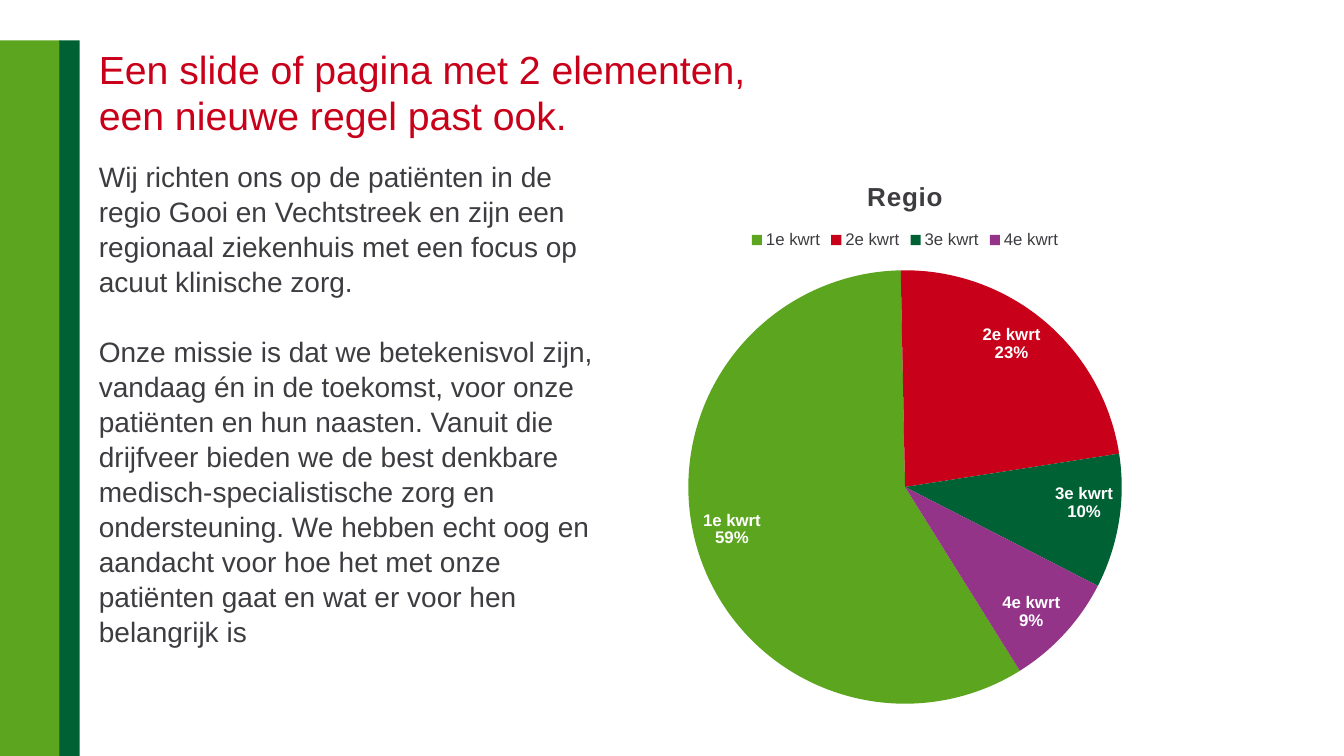
from lxml.etree import SubElement
from pptx import Presentation
from pptx.chart.data import CategoryChartData
from pptx.dml.color import RGBColor
from pptx.enum.chart import XL_CHART_TYPE as Chart, XL_LABEL_POSITION as LabelPos
from pptx.enum.chart import XL_LEGEND_POSITION as LegendPos
from pptx.enum.shapes import MSO_SHAPE as Shape
from pptx.enum.text import MSO_ANCHOR as Anchor
from pptx.oxml.ns import qn
from pptx.util import Pt

# Content
TITLE = ["Een slide of pagina met 2 elementen,\veen nieuwe regel past ook."]
BODY = [
    "Wij richten ons op de patiënten in de regio Gooi en Vechtstreek en zijn een "
    "regionaal ziekenhuis met een focus op acuut klinische zorg.",
    "Onze missie is dat we betekenisvol zijn, vandaag én in de toekomst, voor onze "
    "patiënten en hun naasten. Vanuit die drijfveer bieden we de best denkbare "
    "medisch-specialistische zorg en ondersteuning. We hebben echt oog en aandacht "
    "voor hoe het met onze patiënten gaat en wat er voor hen belangrijk is",
]
GREEN, RED, DARK_GREEN, PURPLE = "5CA51E", "C90019", "006134", "933489"
INK, WHITE = "3E3C40", "FFFFFF"
CHART_TITLE = "Regio"
QUARTERS = [("1e kwrt", 8.2, GREEN), ("2e kwrt", 3.2, RED),
            ("3e kwrt", 1.4, DARK_GREEN), ("4e kwrt", 1.2, PURPLE)]

# Layout in points
BARS = [(0, 43.2, GREEN), (42.5, 14.4, DARK_GREEN)]
BAR_TOP, SLIDE_W, SLIDE_H = 28.8, 960, 540
LEFT, CHART_LEFT, TOP, COL_W, COL_H = 70.6, 462.2, 113, 368.6, 398.2
PIE_AREA = {"x": 0.08, "y": 0.2, "w": 0.84, "h": 0.78}


def rgb(color):
    return RGBColor.from_string(color)


def style(font, size, color, bold=False):
    font.name, font.size, font.bold = "Arial", Pt(size), bold
    font.color.rgb = rgb(color)


def paint(fill, color):
    fill.solid()
    fill.fore_color.rgb = rgb(color)


def add_text(s, box, paragraphs, size, color, leading, anchor=Anchor.TOP):
    tf = s.shapes.add_textbox(*map(Pt, box)).text_frame
    tf.word_wrap, tf.vertical_anchor = True, anchor
    tf.margin_left = tf.margin_top = tf.margin_right = tf.margin_bottom = 0
    for i, text in enumerate(paragraphs):
        p = tf.add_paragraph() if i else tf.paragraphs[0]
        p.text = text
        p.line_spacing = Pt(leading)
        if i:
            p.space_before = Pt(leading)
        for r in p.runs:
            style(r.font, size, color)


def add_pie(s):
    data = CategoryChartData()
    data.categories = [name for name, _, _ in QUARTERS]
    data.add_series(CHART_TITLE, [value for _, value, _ in QUARTERS])
    box = map(Pt, (CHART_LEFT, TOP, COL_W, COL_H))
    chart = s.shapes.add_chart(Chart.PIE, *box, data).chart
    style(chart.font, 10, INK)

    # Title and legend
    chart.has_title = True
    p = chart.chart_title.text_frame.paragraphs[0]
    p.text = CHART_TITLE
    style(p.runs[0].font, 18.6, INK, True)
    p.runs[0]._r.get_or_add_rPr().set("spc", "50")
    chart.has_legend = True
    chart.legend.position = LegendPos.TOP
    chart.legend.include_in_layout = False
    style(chart.legend.font, 12, INK)

    # Slices and labels
    plot = chart.plots[0]
    plot.vary_by_categories = True
    for i, (_, _, color) in enumerate(QUARTERS):
        paint(plot.series[0].points[i].format.fill, color)
    labels = plot.series[0].data_labels
    style(labels.font, 12, WHITE, True)
    labels.show_category_name = labels.show_percentage = True
    labels.show_value = False
    labels.number_format, labels.number_format_is_linked = "0%", False
    labels.position = LabelPos.INSIDE_END
    labels._element.find(qn("c:showBubbleSize")).addnext(
        labels._element.makeelement(qn("c:separator"), {}))
    labels._element.find(qn("c:separator")).text = "\n"

    # Rotation and plot area
    pie = chart._chartSpace.find(".//" + qn("c:pieChart"))
    angle = pie.find(qn("c:firstSliceAng"))
    if angle is None:
        angle = SubElement(pie, qn("c:firstSliceAng"))
    angle.set("val", "148")
    area = pie.getparent()
    layout = area.find(qn("c:layout"))
    if layout is None:
        layout = area.makeelement(qn("c:layout"), {})
        area.insert(0, layout)
    manual = SubElement(layout, qn("c:manualLayout"))
    settings = {"layoutTarget": "inner", "xMode": "edge", "yMode": "edge", **PIE_AREA}
    for tag, value in settings.items():
        SubElement(manual, qn("c:" + tag)).set("val", str(value))


def main():
    prs = Presentation()
    prs.slide_width, prs.slide_height = Pt(SLIDE_W), Pt(SLIDE_H)
    s = prs.slides.add_slide(prs.slide_layouts[6])

    # Side bars
    for left, width, color in BARS:
        box = map(Pt, (left, BAR_TOP, width, SLIDE_H - BAR_TOP))
        sp = s.shapes.add_shape(Shape.RECTANGLE, *box)
        sp.shadow.inherit = False
        paint(sp.fill, color)
        sp.line.fill.background()

    # Text and chart
    add_text(s, (LEFT, TOP, COL_W, COL_H), BODY, 20, INK, 25)
    add_pie(s)
    add_text(s, (LEFT, 28, 763.2, 70.6), TITLE, 28, RED, 33, Anchor.BOTTOM)
    prs.save("out.pptx")


if __name__ == "__main__":
    main()
